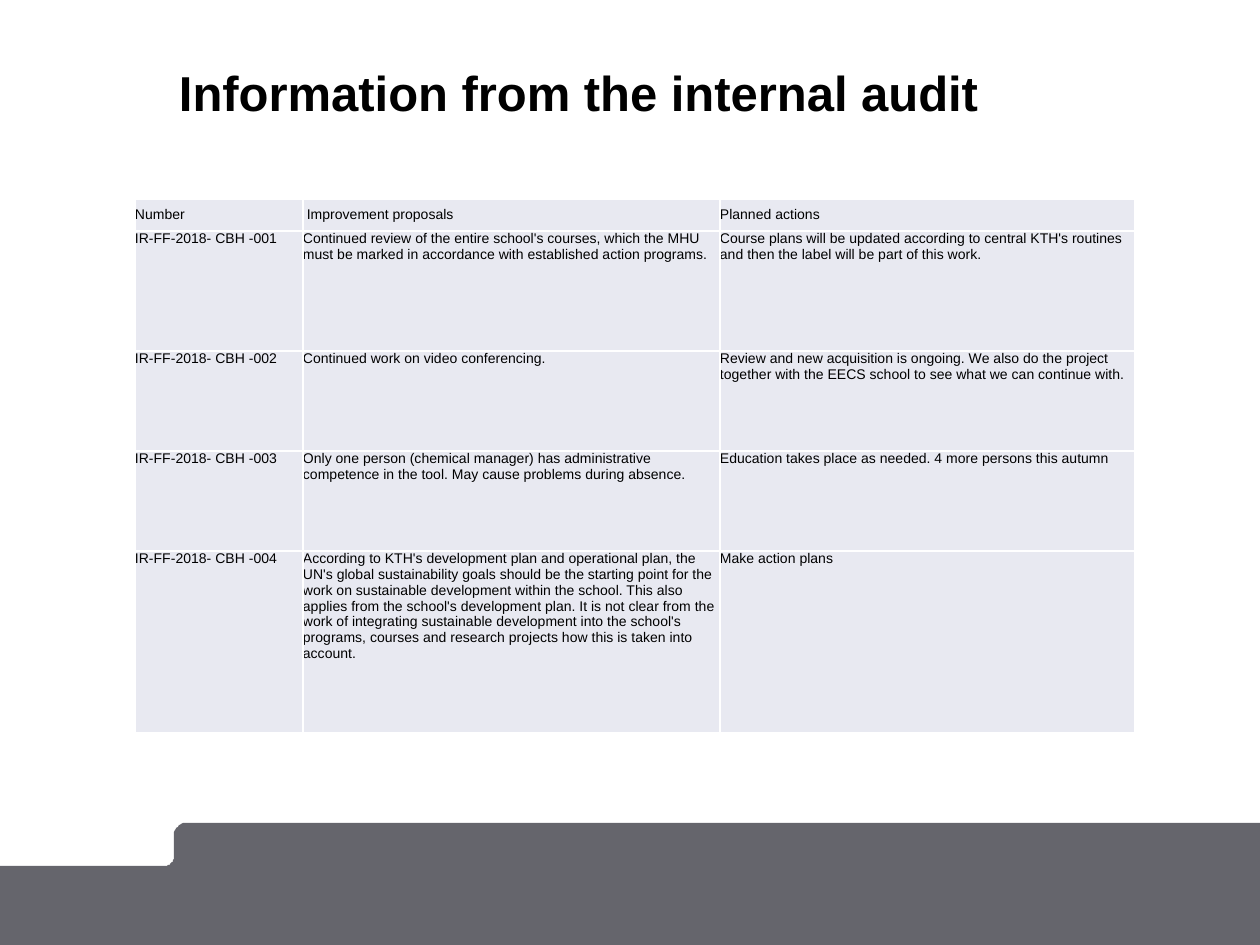
from math import cos, radians, sin
from lxml.etree import SubElement
from pptx import Presentation
from pptx.dml.color import RGBColor
from pptx.enum.text import MSO_ANCHOR, MSO_AUTO_SIZE, PP_ALIGN
from pptx.oxml.ns import qn
from pptx.util import Pt

SCALE = 914400 // 126
HUES = {"ink": "000000", "cell": "E8E9F1", "rule": "FFFFFF", "band": "65656C"}
COLS = [168, 417, 415]
ROWS = [32, 120, 100, 100, 182]
CELLS = [
    ["Number", " Improvement proposals", "Planned actions"],
    ["IR-FF-2018- CBH -001",
     "Continued review of the entire school's courses, which the MHU must be marked in "
     "accordance with established action programs.",
     "Course plans will be updated according to central KTH's routines and then the label "
     "will be part of this work."],
    ["IR-FF-2018- CBH -002",
     "Continued work on video conferencing.",
     "Review and new acquisition is ongoing. We also do the project together with the EECS "
     "school to see what we can continue with."],
    ["IR-FF-2018- CBH -003",
     "Only one person (chemical manager) has administrative competence in the tool. May cause "
     "problems during absence.",
     "Education takes place as needed. 4 more persons this autumn"],
    ["IR-FF-2018- CBH -004",
     "According to KTH's development plan and operational plan, the UN's global "
     "sustainability goals should be the starting point for the work on sustainable "
     "development within the school. This also applies from the school's development plan. "
     "It is not clear from the work of integrating sustainable development into the "
     "school's programs, courses and research projects how this is taken into account.",
     "Make action plans"],
]


def px(num):
    return num * SCALE


def arc(x, y, size, start, end):
    turns = [radians(start + (end - start) * i / 12) for i in range(13)]
    return [(x + size * cos(t), y + size * sin(t)) for t in turns]


class Deck:
    """Holds the style and the current slide."""

    def __init__(self, wide, high):
        self.file = Presentation()
        self.file.slide_width, self.file.slide_height = px(wide), px(high)
        self.slide = self.file.slides.add_slide(self.file.slide_layouts[5])

    def hue(self, name):
        return RGBColor.from_string(HUES[name])

    def font(self, para, size, bold=False):
        font = para.font
        font.name, font.size, font.bold = "Arial", Pt(size), bold
        font.color.rgb = self.hue("ink")

    def title(self, text, x, y, wide, high):
        box = self.slide.shapes.title
        box.left, box.top, box.width, box.height = map(px, (x, y, wide, high))
        frame = box.text_frame
        frame.text = text
        frame.auto_size, frame.word_wrap = MSO_AUTO_SIZE.NONE, True
        frame.vertical_anchor = MSO_ANCHOR.TOP
        frame.margin_left = frame.margin_right = frame.margin_top = frame.margin_bottom = 0
        para = frame.paragraphs[0]
        para.alignment, para.line_spacing = PP_ALIGN.LEFT, Pt(30)
        self.font(para, 28, True)

    def band(self, points):
        build = self.slide.shapes.build_freeform(*points[0], scale=SCALE)
        build.add_line_segments(points[1:], close=True)
        shape = build.convert_to_shape()
        shape.shadow.inherit = False
        shape.fill.solid()
        shape.fill.fore_color.rgb = self.hue("band")
        shape.line.fill.background()

    def cell(self, cell, text, anchor):
        cell.text = text
        cell.vertical_anchor = anchor
        cell.margin_left = cell.margin_right = cell.margin_top = cell.margin_bottom = 0
        self.font(cell.text_frame.paragraphs[0], 8)
        props = cell._tc.get_or_add_tcPr()
        for side in "LRTB":
            line = SubElement(props, qn(f"a:ln{side}"), w=str(Pt(1)))
            SubElement(SubElement(line, qn("a:solidFill")), qn("a:srgbClr"), val=HUES["rule"])
        cell.fill.solid()
        cell.fill.fore_color.rgb = self.hue("cell")

    def table(self, x, y, cols, rows, cells):
        place = map(px, (x, y, sum(cols), sum(rows)))
        grid = self.slide.shapes.add_table(len(rows), len(cols), *place).table
        for col, wide in zip(grid.columns, cols):
            col.width = px(wide)
        for r, (high, texts) in enumerate(zip(rows, cells)):
            grid.rows[r].height = px(high)
            for c, text in enumerate(texts):
                self.cell(grid.cell(r, c), text, MSO_ANCHOR.TOP if r else MSO_ANCHOR.MIDDLE)


def main():
    deck = Deck(1260, 945)
    deck.band([(0, 866), *arc(165, 857, 9, 90, 0), *arc(186, 835, 12, 180, 270),
               (1260, 823), (1260, 945), (0, 945)])
    deck.title("Information from the internal audit", 179, 69, 956, 92)
    deck.table(135, 199, COLS, ROWS, CELLS)
    deck.file.save("out.pptx")


if __name__ == "__main__":
    main()
